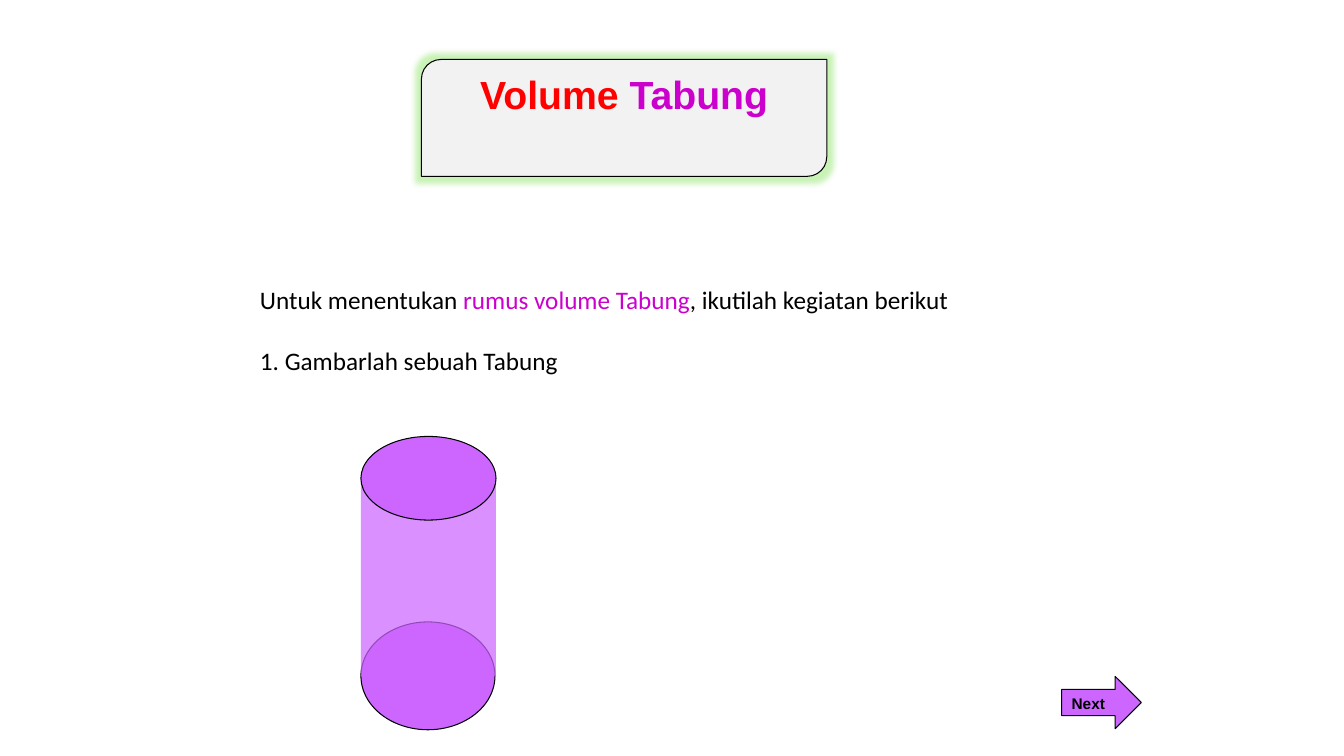
from dataclasses import dataclass

from lxml import etree
from pptx import Presentation
from pptx.dml.color import RGBColor
from pptx.enum.shapes import MSO_SHAPE
from pptx.enum.text import MSO_ANCHOR, PP_ALIGN
from pptx.oxml.ns import qn
from pptx.util import Inches, Pt

OVAL = MSO_SHAPE.OVAL
RECT = MSO_SHAPE.RECTANGLE
PLAQUE = MSO_SHAPE.ROUND_2_DIAG_RECTANGLE
ARROW = MSO_SHAPE.RIGHT_ARROW
TOP = MSO_ANCHOR.TOP
LEFT, CENTER = PP_ALIGN.LEFT, PP_ALIGN.CENTER

BLACK, RED, PINK = "000000", "FF0000", "CC00CC"
VIOLET, GRAY, GREEN = "CC66FF", "F2F2F2", "78E04A"


@dataclass
class Part:
    kind: int
    left: float
    top: float
    width: float
    height: float
    fill: str = VIOLET
    line: bool = True
    alpha: int = 100


def color(code: str) -> RGBColor:
    return RGBColor.from_string(code)


def set_alpha(node, percent: int) -> None:
    etree.SubElement(node, qn("a:alpha")).set("val", str(percent * 1000))


def draw(slide, part: Part):
    shape = slide.shapes.add_shape(
        part.kind, Inches(part.left), Inches(part.top),
        Inches(part.width), Inches(part.height))
    shape.shadow.inherit = False
    shape.fill.solid()
    shape.fill.fore_color.rgb = color(part.fill)
    if part.alpha < 100:
        set_alpha(shape.fill._xPr.find(".//" + qn("a:srgbClr")), part.alpha)
    if part.line:
        shape.line.color.rgb = color(BLACK)
        shape.line.width = Pt(0.75)
    else:
        shape.line.fill.background()
    return shape


def add_glow(shape, code: str, size: float, percent: int) -> None:
    effects = shape._element.spPr.find(qn("a:effectLst"))
    glow = etree.SubElement(effects, qn("a:glow"), rad=str(Pt(size)))
    set_alpha(etree.SubElement(glow, qn("a:srgbClr"), val=code), percent)


def write(para, runs: list[tuple[str, str]], *, font: str, size: int,
          bold: bool = False, align=LEFT, before: int = 0) -> None:
    para.alignment = align
    if before:
        para.space_before = Pt(before)
    for text, code in runs:
        run = para.add_run()
        run.text = text
        run.font.name = font
        run.font.size = Pt(size)
        run.font.bold = bold
        run.font.color.rgb = color(code)


def main() -> None:
    deck = Presentation()
    deck.slide_width, deck.slide_height = Inches(13.33), Inches(7.5)
    slide = deck.slides.add_slide(deck.slide_layouts[6])

    # Instructions
    box = slide.shapes.add_textbox(
        Inches(2.48), Inches(2.77), Inches(8.78), Inches(1.31))
    frame = box.text_frame
    frame.word_wrap = True
    write(frame.paragraphs[0],
          [("Untuk menentukan ", BLACK), ("rumus volume Tabung", PINK),
           (", ikutilah kegiatan berikut", BLACK)],
          font="Calibri", size=18)
    write(frame.add_paragraph(), [("1. Gambarlah sebuah Tabung", BLACK)],
          font="Calibri", size=18, before=22)

    # Cylinder: base, side, lid
    for part in (Part(OVAL, 3.58, 6.17, 1.33, 1.07),
                 Part(RECT, 3.58, 4.74, 1.34, 1.97, line=False, alpha=72),
                 Part(OVAL, 3.58, 4.33, 1.34, 0.83)):
        draw(slide, part)

    # Title
    title = draw(slide, Part(PLAQUE, 4.18, 0.59, 4.02, 1.16, GRAY))
    add_glow(title, GREEN, 8, 40)
    title.text_frame.vertical_anchor = TOP
    write(title.text_frame.paragraphs[0],
          [("Volume ", RED), ("Tabung", PINK)],
          font="Arial", size=28, bold=True, align=CENTER)

    # Next arrow
    arrow = draw(slide, Part(ARROW, 10.53, 6.71, 0.79, 0.52))
    arrow.text_frame.vertical_anchor = TOP
    write(arrow.text_frame.paragraphs[0], [("Next", BLACK)],
          font="Arial", size=11, bold=True)

    deck.save("out.pptx")


if __name__ == "__main__":
    main()
